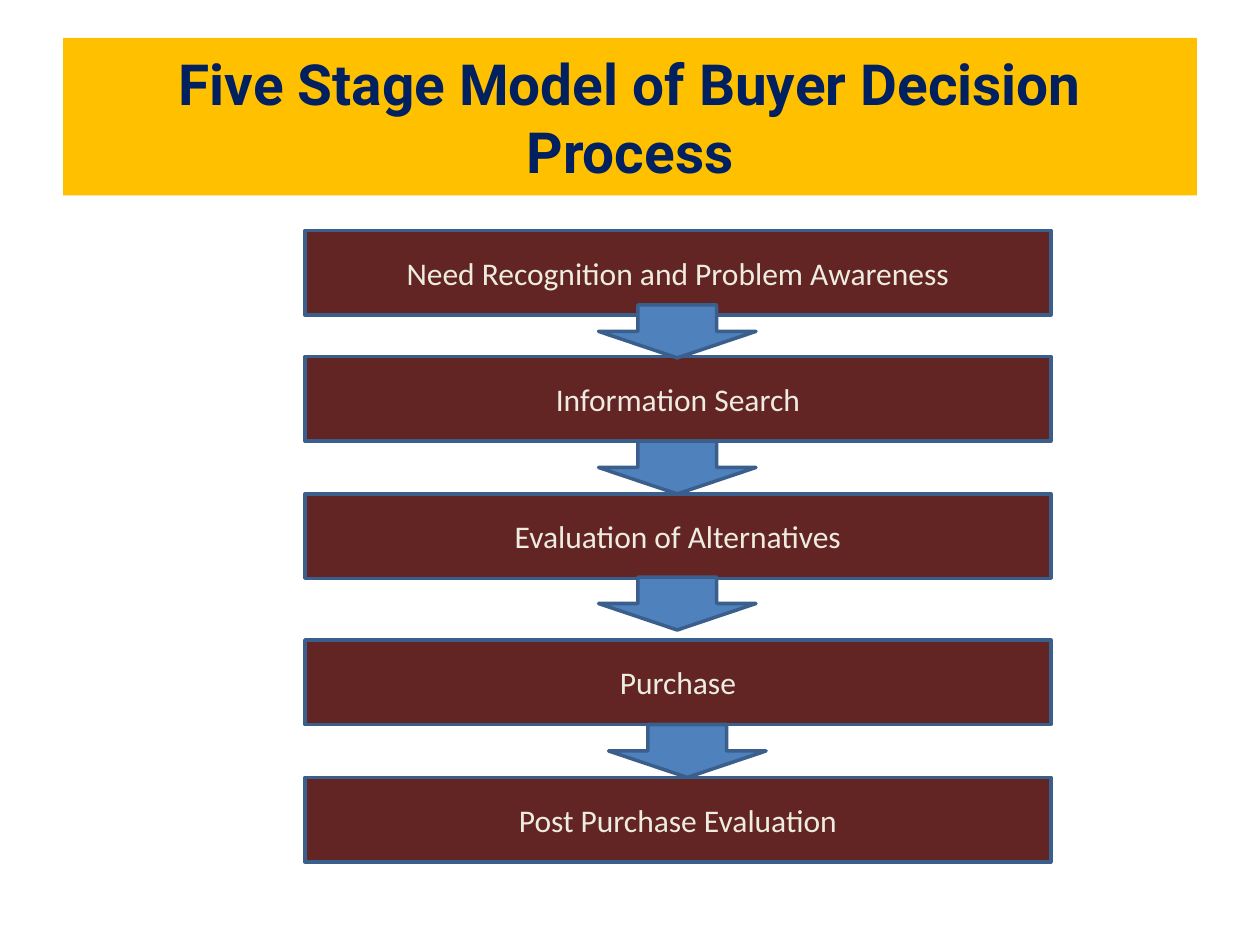
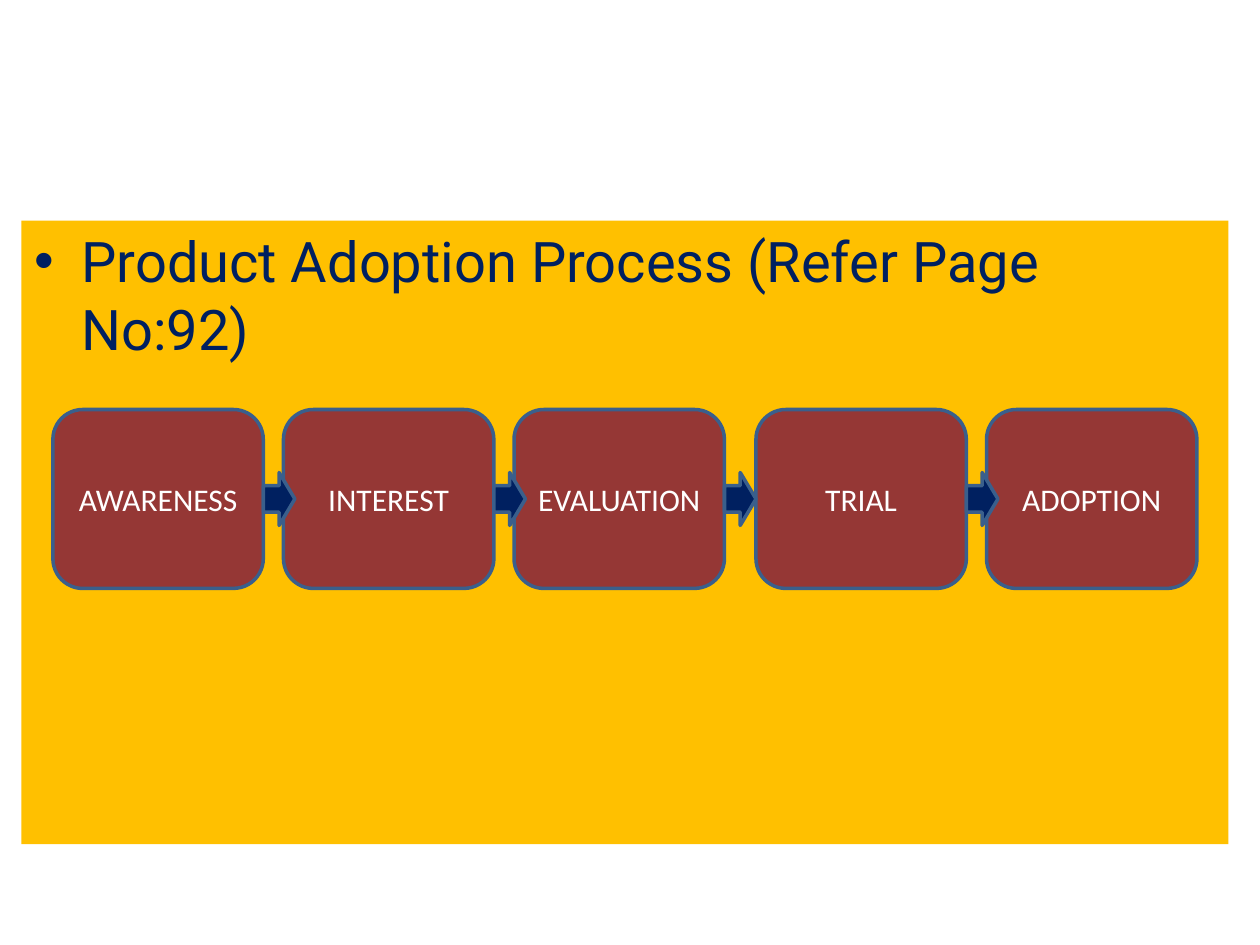
from dataclasses import dataclass

from pptx import Presentation
from pptx.dml.color import RGBColor
from pptx.enum.shapes import MSO_SHAPE
from pptx.enum.text import MSO_ANCHOR, MSO_AUTO_SIZE, PP_ALIGN
from pptx.util import Inches, Pt

RECTANGLE = MSO_SHAPE.RECTANGLE
ROUNDED = MSO_SHAPE.ROUNDED_RECTANGLE
DOWN_ARROW = MSO_SHAPE.DOWN_ARROW
RIGHT_ARROW = MSO_SHAPE.RIGHT_ARROW
CENTER = PP_ALIGN.CENTER
LEFT = PP_ALIGN.LEFT
MIDDLE = MSO_ANCHOR.MIDDLE
TOP = MSO_ANCHOR.TOP
NO_AUTOFIT = MSO_AUTO_SIZE.NONE
TITLE_ONLY, TITLE_AND_CONTENT = 5, 1

DECISION_TITLE = "Five Stage Model of Buyer Decision Process"
# Stage name, top of its box
DECISION_STAGES = [
    ("Need Recognition and Problem Awareness", 1.83),
    ("Information Search", 2.83),
    ("Evaluation of Alternatives", 3.92),
    ("Purchase", 5.08),
    ("Post Purchase Evaluation", 6.17),
]
# Left and top of the arrow below each stage but the last
DECISION_ARROWS = [(4.75, 2.42), (4.75, 3.5), (4.75, 4.58), (4.83, 5.75)]

ADOPTION_HEADING = "Product Adoption Process (Refer Page No:92)"
# Stage name, left of its box
ADOPTION_STAGES = [
    ("AWARENESS", 0.42),
    ("INTEREST", 2.25),
    ("EVALUATION", 4.08),
    ("TRIAL", 6),
    ("ADOPTION", 7.83),
]


@dataclass(frozen=True)
class Theme:
    heading_font: str = "Roboto"
    stage_font: str = "Calibri"
    title_size: float = 32.4
    body_size: float = 32
    stage_size: float = 18
    line_width: float = 2
    band: str = "FFC000"
    navy: str = "002060"
    outline: str = "3A5F8C"
    decision_box: str = "632523"
    decision_text: str = "EEECE1"
    decision_arrow: str = "4F81BD"
    adoption_box: str = "953735"
    white: str = "FFFFFF"


THEME = Theme()


def fill_shape(shape, color):
    shape.fill.solid()
    shape.fill.fore_color.rgb = RGBColor.from_string(color)


def place(shape, left, top, width, height):
    shape.left, shape.top = Inches(left), Inches(top)
    shape.width, shape.height = Inches(width), Inches(height)


def write(shape, text, font_name, size, color, align, anchor, bold=False):
    frame = shape.text_frame
    frame.word_wrap = True
    frame.auto_size = NO_AUTOFIT
    frame.vertical_anchor = anchor
    paragraph = frame.paragraphs[0]
    paragraph.alignment = align
    paragraph.space_before = Pt(0)
    run = paragraph.add_run()
    run.text = text
    run.font.name = font_name
    run.font.size = Pt(size)
    run.font.bold = bold
    run.font.color.rgb = RGBColor.from_string(color)


def fill_band(placeholder, box, text, size, align, anchor, bold=False):
    """Turn a placeholder into a yellow band with navy heading text."""
    place(placeholder, *box)
    fill_shape(placeholder, THEME.band)
    write(placeholder, text, THEME.heading_font, size, THEME.navy,
          align, anchor, bold)


def add_outlined(slide, kind, box, color):
    shape = slide.shapes.add_shape(kind, *(Inches(value) for value in box))
    shape.shadow.inherit = False
    fill_shape(shape, color)
    shape.line.color.rgb = RGBColor.from_string(THEME.outline)
    shape.line.width = Pt(THEME.line_width)
    return shape


def add_stage(slide, kind, box, color, name, text_color):
    shape = add_outlined(slide, kind, box, color)
    write(shape, name, THEME.stage_font, THEME.stage_size, text_color,
          CENTER, MIDDLE)


def build_decision_slide(presentation):
    slide = presentation.slides.add_slide(
        presentation.slide_layouts[TITLE_ONLY])
    fill_band(slide.shapes.title, (0.5, 0.3, 9, 1.25), DECISION_TITLE,
              THEME.title_size, CENTER, MIDDLE, bold=True)
    for name, top in DECISION_STAGES:
        add_stage(slide, RECTANGLE, (2.42, top, 5.92, 0.67),
                  THEME.decision_box, name, THEME.decision_text)
    for left, top in DECISION_ARROWS:
        add_outlined(slide, DOWN_ARROW, (left, top, 1.25, 0.42),
                     THEME.decision_arrow)


def build_adoption_slide(presentation):
    slide = presentation.slides.add_slide(
        presentation.slide_layouts[TITLE_AND_CONTENT])
    title = slide.shapes.title.element
    title.getparent().remove(title)
    fill_band(slide.placeholders[1], (0.17, 1.75, 9.58, 4.95),
              ADOPTION_HEADING, THEME.body_size, LEFT, TOP)

    top, width, height = 3.25, 1.67, 1.42
    arrow_width, arrow_height = 0.25, 0.42
    for name, left in ADOPTION_STAGES:
        add_stage(slide, ROUNDED, (left, top, width, height),
                  THEME.adoption_box, name, THEME.white)
    arrow_top = top + (height - arrow_height) / 2
    for _, left in ADOPTION_STAGES[:-1]:
        add_outlined(slide, RIGHT_ARROW,
                     (left + width, arrow_top, arrow_width, arrow_height),
                     THEME.navy)


def main():
    presentation = Presentation()
    presentation.slide_width = Inches(10)
    presentation.slide_height = Inches(7.5)
    build_decision_slide(presentation)
    build_adoption_slide(presentation)
    presentation.save("out.pptx")


if __name__ == "__main__":
    main()
